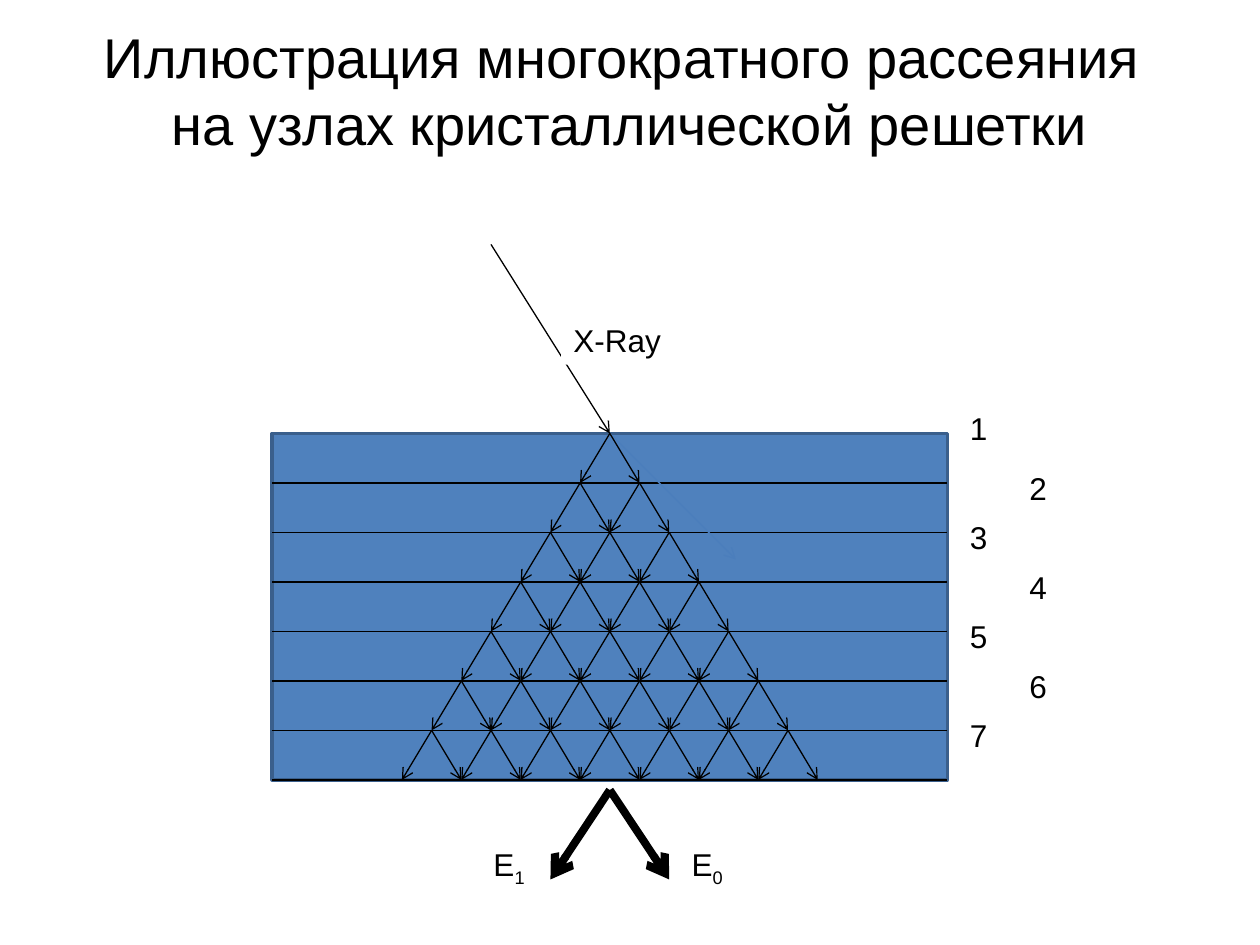
from collections import namedtuple
from dataclasses import dataclass

from lxml import etree
from pptx import Presentation
from pptx.dml.color import RGBColor
from pptx.enum.shapes import MSO_CONNECTOR, MSO_SHAPE
from pptx.enum.text import MSO_ANCHOR, MSO_AUTO_SIZE, PP_ALIGN
from pptx.oxml.ns import qn
from pptx.util import Inches, Pt

LINE = MSO_CONNECTOR.STRAIGHT
RECT = MSO_SHAPE.RECTANGLE
TOP = MSO_ANCHOR.TOP
MID = PP_ALIGN.CENTER
LEFT = PP_ALIGN.LEFT
GROW = MSO_AUTO_SIZE.SHAPE_TO_FIT_TEXT

Box = namedtuple("Box", "x y w h")


@dataclass(frozen=True)
class Theme:
    font: str = "Arial"
    head: int = 32
    body: int = 18
    thin: float = 0.75
    edge: float = 2
    thick: float = 4.5
    ink: str = "000000"
    paper: str = "FFFFFF"
    fill: str = "4F81BD"
    rim: str = "3A5F8C"
    faint: str = "4B7EBC"


THEME = Theme()
WIDE, HIGH = 10, 7.5
ROWS = 7
LABEL = 0.4


def paint(fill, tone):
    fill.solid()
    fill.fore_color.rgb = RGBColor.from_string(tone)


def place(shape, box):
    shape.left, shape.top, shape.width, shape.height = map(Inches, box)


def ray(slide, start, end, tone=THEME.ink, width=THEME.thin, arrow=True):
    line = slide.shapes.add_connector(LINE, *map(Inches, (*start, *end)))
    line.line.color.rgb = RGBColor.from_string(tone)
    line.line.width = Pt(width)
    if arrow:
        etree.SubElement(line.line._get_or_add_ln(), qn("a:tailEnd"), type="arrow")
    etree.SubElement(line._element.spPr, qn("a:effectLst"))


def write(para, text, size, align, base=None):
    para.alignment = align
    run = para.add_run()
    run.text = text
    run.font.name = THEME.font
    run.font.size = Pt(size)
    run.font.color.rgb = RGBColor.from_string(THEME.ink)
    if base:
        run._r.get_or_add_rPr().set("baseline", base)


def label(slide, box, text, sub=""):
    note = slide.shapes.add_textbox(*map(Inches, box))
    paint(note.fill, THEME.paper)
    frame = note.text_frame
    frame.word_wrap = False
    frame.auto_size = GROW
    para = frame.paragraphs[0]
    write(para, text, THEME.body, LEFT)
    if sub:
        write(para, sub, THEME.body, LEFT, "-25000")


def title(slide, box, lines):
    head = slide.shapes.title
    place(head, box)
    paint(head.fill, THEME.paper)
    frame = head.text_frame
    frame.word_wrap = True
    frame.auto_size = GROW
    frame.vertical_anchor = TOP
    for i, text in enumerate(lines):
        para = frame.add_paragraph() if i else frame.paragraphs[0]
        write(para, text, THEME.head, MID)


def crystal(slide, box, col, row):
    slab = slide.shapes.add_shape(RECT, *map(Inches, box))
    slab.shadow.inherit = False
    paint(slab.fill, THEME.fill)
    slab.line.color.rgb = RGBColor.from_string(THEME.rim)
    slab.line.width = Pt(THEME.edge)
    for i in range(1, ROWS + 1):
        y = box.y + i * row
        ray(slide, (box.x, y), (box.x + box.w, y), arrow=False)

    mid = box.x + box.w / 2
    ray(slide, (mid, box.y), (mid + 1, box.y + 1), THEME.faint)
    for i in range(ROWS):
        y = box.y + i * row
        for j in range(i + 1):
            x = mid + (2 * j - i) * col
            for side in (-col, col):
                ray(slide, (x, y), (x + side, y + row))


def beam(slide, box):
    ray(slide, (box.x, box.y), (box.x + box.w, box.y + box.h))
    label(slide, Box(box.x + 0.59 * box.w, box.y + 0.37 * box.h, 0.9, LABEL), "X-Ray")


def planes(slide, box, col, row):
    for i in range(ROWS):
        lift = 0.16 if i else 0.24
        x = box.x + i % 2 * 2 * col
        label(slide, Box(x, box.y + i * row - lift, 0.34, LABEL), str(i + 1))


def exits(slide, box):
    mid = box.x + box.w / 2
    for x, sub, left in (
        (box.x + box.w, "0", box.x + box.w + 0.08),
        (box.x, "1", box.x - 0.55),
    ):
        ray(slide, (mid, box.y), (x, box.y + box.h), width=THEME.thick)
        label(slide, Box(left, box.y + 0.55 * box.h, 0.46, LABEL), "E", sub)


def main():
    deck = Presentation()
    deck.slide_width, deck.slide_height = Inches(WIDE), Inches(HIGH)
    slide = deck.slides.add_slide(deck.slide_layouts[5])

    slab = Box(2.16, 3.44, 5.36, 2.75)
    row = slab.h / ROWS
    col = 0.6 * row
    mid = slab.x + slab.w / 2

    title(slide, Box(0, 0.13, WIDE, 1.18), (
        "Иллюстрация многократного рассеяния ",
        "на узлах кристаллической решетки",
    ))
    crystal(slide, slab, col, row)
    beam(slide, Box(mid - 4 * col, slab.y - 1.5, 4 * col, 1.5))
    planes(slide, Box(7.6, slab.y, 4 * col, slab.h), col, row)
    exits(slide, Box(mid - 2 * col, 6.27, 4 * col, 0.71))
    deck.save("out.pptx")


if __name__ == "__main__":
    main()
